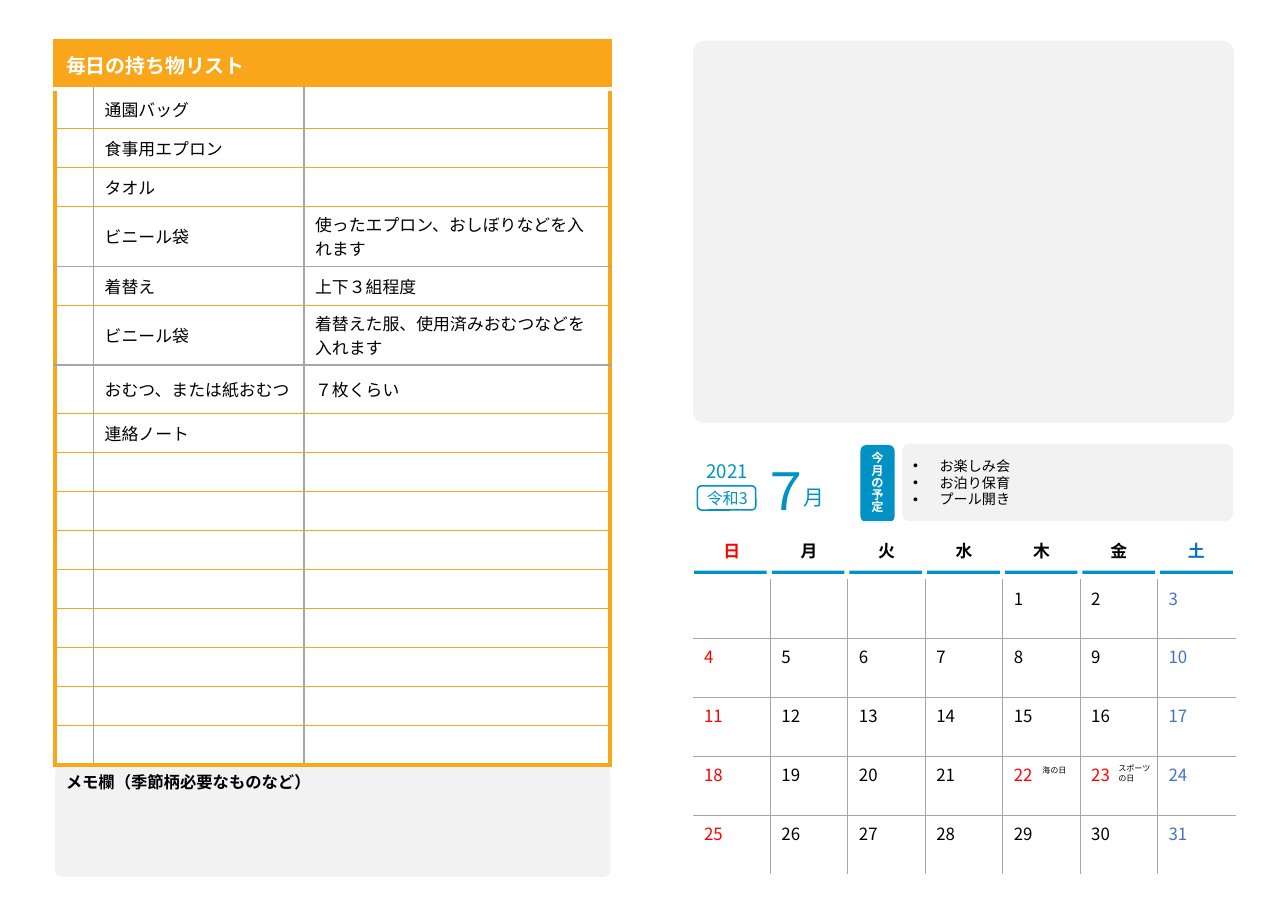
"""Build a nursery handout slide with a belongings list and a July calendar."""
from lxml import etree
from pptx import Presentation
from pptx.dml.color import RGBColor
from pptx.enum.shapes import MSO_SHAPE
from pptx.enum.text import MSO_ANCHOR, PP_ALIGN
from pptx.oxml.ns import qn
from pptx.util import Inches, Pt

FONT = "Noto Sans CJK JP"
ROUNDED = MSO_SHAPE.ROUNDED_RECTANGLE
RECTANGLE = MSO_SHAPE.RECTANGLE
TOP, MIDDLE = MSO_ANCHOR.TOP, MSO_ANCHOR.MIDDLE
LEFT, CENTER = PP_ALIGN.LEFT, PP_ALIGN.CENTER
COLORS = {
    "black": "000000", "white": "FFFFFF", "red": "FF0000", "panel": "F2F2F2",
    "teal": "0092C4", "orange": "FAA61A", "gray": "A6A6A6",
    "saturday": "0070C0", "saturday_date": "4472C4",
}


def write(frame, text, size=11, color="black", bold=False, align=LEFT, spacing=None):
    """Fill a text frame, one paragraph for each line of text."""
    frame.word_wrap = True
    frame.margin_left = frame.margin_right = Inches(0.08)
    frame.margin_top = frame.margin_bottom = Inches(0.04)
    for index, line in enumerate(text.split("\n")):
        paragraph = frame.add_paragraph() if index else frame.paragraphs[0]
        paragraph.alignment = align
        if spacing:
            paragraph.line_spacing = Pt(spacing)
        if not line:
            paragraph._p.get_or_add_endParaRPr().set("sz", str(size * 100))
            continue
        run = paragraph.add_run()
        run.text = line
        run.font.name = FONT
        run.font.size = Pt(size)
        run.font.bold = bold
        run.font.color.rgb = RGBColor.from_string(COLORS[color])
        etree.SubElement(run.font._element, qn("a:ea"), typeface=FONT)


def format_cell(cell, fill, **borders):
    """Set the fill and the left, right, top and bottom borders of a cell."""
    properties = cell._tc.get_or_add_tcPr()
    for side in ("L", "R", "T", "B"):
        color, width = borders[side]
        line = etree.SubElement(properties, qn(f"a:ln{side}"), w=str(Pt(width)))
        solid = etree.SubElement(line, qn("a:solidFill"))
        etree.SubElement(solid, qn("a:srgbClr"), val=COLORS[color])
    if fill:
        cell.fill.solid()
        cell.fill.fore_color.rgb = RGBColor.from_string(COLORS[fill])
    else:
        cell.fill.background()


presentation = Presentation()
presentation.slide_width = Inches(11.69)
presentation.slide_height = Inches(8.27)
slide = presentation.slides.add_slide(presentation.slide_layouts[6])

shapes = [
    (ROUNDED, 6.29, 0.37, 4.91, 3.47, 0.03, "panel", None),
    (ROUNDED, 8.19, 4.03, 3, 0.7, 0.09, "panel", None),
    (ROUNDED, 7.81, 4.04, 0.31, 0.7, 0.17, "teal", None),
    (ROUNDED, 0.5, 6.95, 5.04, 1.01, 0.06, "panel", None),
    (ROUNDED, 6.33, 4.41, 0.53, 0.22, 0.17, None, "teal"),
]
shapes += [(RECTANGLE, 6.3 + 0.705 * day, 5.18, 0.66, 0.03, None, "teal", None)
           for day in range(7)]
drawn = []
for kind, left, top, width, height, radius, fill, line in shapes:
    shape = slide.shapes.add_shape(
        kind, Inches(left), Inches(top), Inches(width), Inches(height))
    shape.shadow.inherit = False
    if radius:
        shape.adjustments[0] = radius
    if fill:
        shape.fill.solid()
        shape.fill.fore_color.rgb = RGBColor.from_string(COLORS[fill])
    else:
        shape.fill.background()
    if line:
        shape.line.color.rgb = RGBColor.from_string(COLORS[line])
        shape.line.width = Pt(1)
    else:
        shape.line.fill.background()
    drawn.append(shape)

plans, plans_label, memo = drawn[1:4]
write(plans.text_frame, "お楽しみ会\nお泊り保育\nプール開き", size=9.2, spacing=11)
write(plans_label.text_frame, "今月の予定", size=8, color="white", bold=True,
      align=CENTER, spacing=8)
write(memo.text_frame, "メモ欄（季節柄必要なものなど）", size=10.7, bold=True)
plans.text_frame.vertical_anchor = MIDDLE
plans_label.text_frame.vertical_anchor = MIDDLE
memo.text_frame.vertical_anchor = TOP
for paragraph in plans.text_frame.paragraphs:
    properties = paragraph._p.get_or_add_pPr()
    properties.set("marL", str(Inches(0.24)))
    properties.set("indent", str(-Inches(0.24)))
    etree.SubElement(properties, qn("a:buFont"), typeface="Arial")
    etree.SubElement(properties, qn("a:buChar"), char="•")

weekdays = "日月火水木金土"
holidays = (22, 23)
calendar = slide.shapes.add_table(
    6, 7, Inches(6.29), Inches(4.73), Inches(4.92), Inches(3.21)).table
calendar.first_row = calendar.horz_banding = False
for column in calendar.columns:
    column.width = Inches(4.92 / 7)
for week, row in enumerate(calendar.rows):
    row.height = Inches(3.21 / 6)
    for day, cell in enumerate(row.cells):
        date = (week - 1) * 7 + day - 3
        if week == 0:
            color = {0: "red", 6: "saturday"}.get(day, "black")
            write(cell.text_frame, weekdays[day], color=color, bold=True, align=CENTER)
            cell.vertical_anchor = MIDDLE
        else:
            color = {0: "red", 6: "saturday_date"}.get(day, "black")
            write(cell.text_frame, str(date) if date > 0 else "",
                  color="red" if date in holidays else color)
        format_cell(
            cell, None,
            L=("gray" if week and day else "white", 0.75),
            R=("gray" if week and day < 6 else "white", 0.75),
            T=("gray" if week > 1 else "white", 0.75),
            B=("gray" if 0 < week < 5 else "white", 0.75))

belongings = [
    ("通園バッグ", ""), ("食事用エプロン", ""), ("タオル", ""),
    ("ビニール袋", "使ったエプロン、おしぼりなどを入れます"),
    ("着替え", "上下３組程度"),
    ("ビニール袋", "着替えた服、使用済みおむつなどを入れます"),
    ("おむつ、または紙おむつ", "７枚くらい"), ("連絡ノート", ""),
] + [("", "")] * 8
tall_rows = (0, 4, 6, 7)
gray_below = (4, 6)
checklist = slide.shapes.add_table(
    17, 3, Inches(0.5), Inches(0.37), Inches(5.04), Inches(6.37)).table
checklist.first_row = checklist.horz_banding = False
for column, width in zip(checklist.columns, (0.35, 1.91, 2.78)):
    column.width = Inches(width)
for index, row in enumerate(checklist.rows):
    row.height = Inches(0.44 if index in tall_rows else (6.37 - 4 * 0.44) / 13)
    for position, cell in enumerate(row.cells):
        cell.vertical_anchor = MIDDLE
        if index == 0:
            format_cell(cell, "orange", L=("orange", 3), R=("orange", 3),
                        T=("orange", 3), B=("white", 3))
            continue
        write(cell.text_frame, ("", *belongings[index - 1])[position])
        above = "gray" if index - 1 in gray_below else "orange"
        below = "gray" if index in gray_below else "orange"
        format_cell(
            cell, None,
            L=("gray", 1) if position else ("orange", 3),
            R=("gray", 1) if position < 2 else ("orange", 3),
            T=("white", 3) if index == 1 else (above, 1),
            B=("orange", 3) if index == 16 else (below, 1))
checklist.cell(0, 0).merge(checklist.cell(0, 2))
write(checklist.cell(0, 0).text_frame, "毎日の持ち物リスト", size=13, color="white", bold=True)

labels = [
    ("７", 6.82, 4.13, 0.53, 0.67, 33.6, "teal", LEFT),
    ("月", 7.21, 4.36, 0.39, 0.33, 13.7, "teal", LEFT),
    ("海の日", 9.38, 6.91, 0.43, 0.19, 5.3, "black", LEFT),
    ("スポーツ\nの日", 10.07, 6.89, 0.53, 0.28, 5.3, "black", LEFT),
    ("令和3", 6.29, 4.39, 0.62, 0.28, 10.5, "teal", CENTER),
    ("2021", 6.29, 4.13, 0.62, 0.31, 12.2, "teal", CENTER),
]
for text, left, top, width, height, size, color, align in labels:
    label = slide.shapes.add_textbox(
        Inches(left), Inches(top), Inches(width), Inches(height))
    write(label.text_frame, text, size=size, color=color, align=align)

presentation.save("out.pptx")
